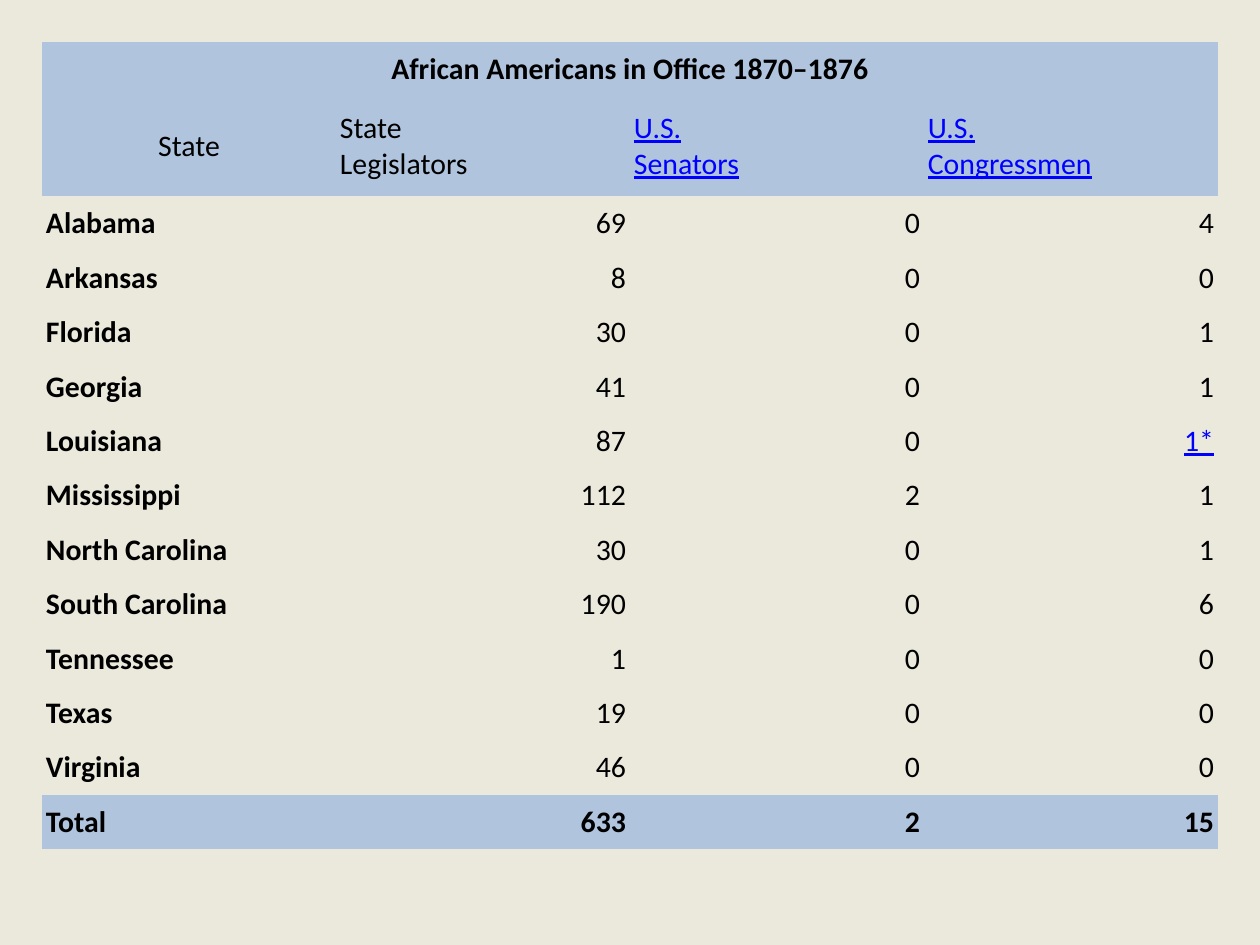
from copy import deepcopy

from pptx import Presentation, util as u
from pptx.dml.color import RGBColor
from pptx.enum import text
from pptx.oxml.ns import qn

PX = 914400 / 126
BACKGROUND = RGBColor(0xEB, 0xE9, 0xDC)
BAND = RGBColor(0xB0, 0xC4, 0xDE)
BLACK = RGBColor(0, 0, 0)
LINK_BLUE = RGBColor(0, 0, 0xFF)
NO_GRID_STYLE = "{2D5ABB26-0587-4C30-8999-92F81FD0307C}"

TITLE = "African Americans in Office 1870–1876"
HEADINGS = ("State", "State\nLegislators", "U.S.\nSenators", "U.S.\nCongressmen")
STATES = [
    ("Alabama", "69", "0", "4"),
    ("Arkansas", "8", "0", "0"),
    ("Florida", "30", "0", "1"),
    ("Georgia", "41", "0", "1"),
    ("Louisiana", "87", "0", "1*"),
    ("Mississippi", "112", "2", "1"),
    ("North Carolina", "30", "0", "1"),
    ("South Carolina", "190", "0", "6"),
    ("Tennessee", "1", "0", "0"),
    ("Texas", "19", "0", "0"),
    ("Virginia", "46", "0", "0"),
]
TOTAL = ("Total", "633", "2", "15")
LINKED = {HEADINGS[2], HEADINGS[3], "1*"}

LEFT, TOP, WIDTH, HEIGHT = 42, 42, 1176, 808
HEADING_HEIGHT = 100
INSET = 4


def px(length):
    return u.Emu(round(length * PX))


def fill_cell(cell, words, align, bold, banded):
    for side in ("left", "right", "top", "bottom"):
        setattr(cell, f"margin_{side}", px(INSET))
    cell.vertical_anchor = text.MSO_ANCHOR.MIDDLE
    if banded:
        cell.fill.solid()
        cell.fill.fore_color.rgb = BAND
    else:
        cell.fill.background()

    paragraph = cell.text_frame.paragraphs[0]
    paragraph.text = words
    paragraph.alignment = align
    linked = words in LINKED
    formats = {"name": "Calibri", "size": u.Pt(17), "bold": bold, "underline": linked}
    for run in paragraph.runs:
        for name, value in formats.items():
            setattr(run.font, name, value)
        run.font.color.rgb = LINK_BLUE if linked else BLACK
    # Line breaks take the run's format so that both lines are equally high.
    for line_break in paragraph._p.findall(qn("a:br")):
        line_break.append(deepcopy(paragraph.runs[0]._r.rPr))


def main():
    deck = Presentation()
    deck.slide_width, deck.slide_height = px(1260), px(945)
    slide = deck.slides.add_slide(deck.slide_layouts[6])
    slide.background.fill.solid()
    slide.background.fill.fore_color.rgb = BACKGROUND

    rows = [(TITLE, "", "", ""), HEADINGS, *STATES, TOTAL]
    frame = slide.shapes.add_table(
        len(rows), len(HEADINGS), px(LEFT), px(TOP), px(WIDTH), px(HEIGHT))
    table = frame.table
    table.first_row = table.horz_banding = False
    table._tbl.tblPr.find(qn("a:tableStyleId")).text = NO_GRID_STYLE

    plain_height = (HEIGHT - HEADING_HEIGHT) / (len(rows) - 1)
    center, left, right = (text.PP_ALIGN.CENTER, text.PP_ALIGN.LEFT, text.PP_ALIGN.RIGHT)
    for r, row in enumerate(rows):
        table.rows[r].height = px(HEADING_HEIGHT if row is HEADINGS else plain_height)
        for c, words in enumerate(row):
            if r < 2:
                align = center if c == 0 else left
            else:
                align = left if c == 0 else right
            bold = row is not HEADINGS and (c == 0 or row is TOTAL)
            fill_cell(table.cell(r, c), words, align, bold, r < 2 or row is TOTAL)
    table.cell(0, 0).merge(table.cell(0, len(HEADINGS) - 1))

    deck.save("out.pptx")


if __name__ == "__main__":
    main()
